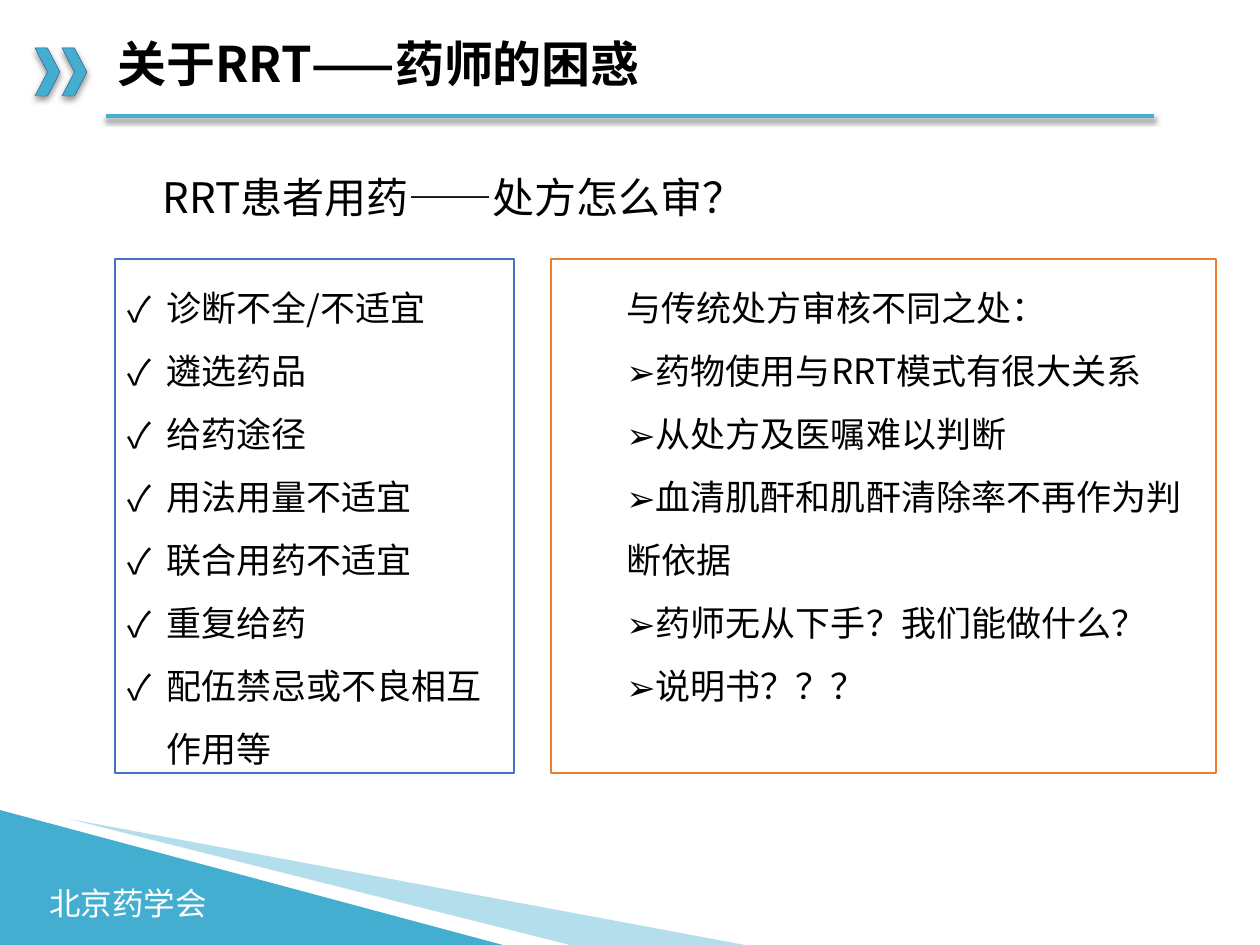
from dataclasses import dataclass

from lxml import etree
from pptx import Presentation
from pptx import util as u
from pptx.dml.color import RGBColor
from pptx.enum import lang, shapes, text
from pptx.oxml import ns

EMU_PER_PX = 914400 / 126
FONT = "Noto Sans CJK SC"
BLACK = RGBColor(0x00, 0x00, 0x00)
WHITE = RGBColor(0xFF, 0xFF, 0xFF)
GRAY = RGBColor(0x80, 0x80, 0x80)
TEAL = RGBColor(0x44, 0xAE, 0xD0)
NAVY = RGBColor(0x32, 0x54, 0x91)
BLUE = RGBColor(0x44, 0x72, 0xC4)
ORANGE = RGBColor(0xED, 0x7D, 0x31)


@dataclass
class Item:
    words: str
    bullet: str = ""


@dataclass
class Panel:
    box: tuple[int, int, int, int]
    border: RGBColor
    items: list[Item]
    level: int
    margin: int
    indent: int


def px(value: float) -> int:
    return round(value * EMU_PER_PX)


def set_all(target, values: dict) -> None:
    for name, value in values.items():
        setattr(target, name, value)


def place(shape, box: tuple[int, int, int, int]) -> None:
    set_all(shape, dict(zip(("left", "top", "width", "height"), map(px, box))))


def add_node(parent, tag: str, **attributes):
    return etree.SubElement(parent, ns.qn(tag), attributes)


def write(paragraph, words: str, size: int, color: RGBColor = BLACK, bold: bool = False) -> None:
    run = paragraph.add_run()
    run.text = words
    set_all(run.font, {"name": FONT, "size": u.Pt(size), "bold": bold,
                       "language_id": lang.MSO_LANGUAGE_ID.SIMPLIFIED_CHINESE})
    run.font.color.rgb = color
    add_node(run.font._element, "a:ea", typeface=FONT)


def set_bullet(paragraph, bullet: str, margin: int, indent: int) -> None:
    props = paragraph._p.get_or_add_pPr()
    props.set("marL", str(px(margin)))
    props.set("indent", str(px(indent)))
    if bullet:
        add_node(props, "a:buFont", typeface=FONT)
        add_node(props, "a:buChar", char=bullet)
    else:
        add_node(props, "a:buNone")


def cast_shadow(shape, color: RGBColor, alpha: int, blur: int, distance: int) -> None:
    props = shape._element.spPr
    effects = props.find(ns.qn("a:effectLst"))
    if effects is None:
        effects = add_node(props, "a:effectLst")
    shadow = add_node(effects, "a:outerShdw", blurRad=str(u.Pt(blur)), dist=str(u.Pt(distance)),
                      dir="5400000", algn="ctr", rotWithShape="0")
    tint = add_node(shadow, "a:srgbClr", val=str(color))
    add_node(tint, "a:alpha", val=str(alpha * 1000))


def paint(shape, fill: RGBColor, line: RGBColor | None = None, width: float = 1) -> None:
    shape.shadow.inherit = False
    shape.fill.solid()
    shape.fill.fore_color.rgb = fill
    if line is None:
        shape.line.fill.background()
    else:
        shape.line.color.rgb = line
        shape.line.width = u.Pt(width)


def add_preset(slide, kind, box: tuple[int, int, int, int]):
    return slide.shapes.add_shape(kind, *map(px, box))


def draw_footer(slide) -> None:
    wedge = add_preset(slide, shapes.MSO_SHAPE.ISOSCELES_TRIANGLE, (0, 810, 503, 135))
    wedge.adjustments[0] = 0
    paint(wedge, TEAL)

    society = slide.shapes.add_textbox(*map(px, (37, 878, 184, 50)))
    society.text_frame.word_wrap = False
    write(society.text_frame.paragraphs[0], "北京药学会", 18, WHITE)

    outline = slide.shapes.build_freeform(px(69), px(819))
    outline.add_line_segments([(px(745), px(945)), (px(570), px(945))])
    ray = outline.convert_to_shape()
    paint(ray, TEAL)
    tint = ray._element.spPr.find(ns.qn("a:solidFill"))[0]
    add_node(tint, "a:alpha", val="40000")


def draw_heading(slide) -> None:
    rule = slide.shapes.add_connector(shapes.MSO_CONNECTOR.STRAIGHT, px(1154), px(116), px(106), px(116))
    rule.line.color.rgb = TEAL
    rule.line.width = u.Pt(2.25)
    cast_shadow(rule, GRAY, 100, 3, 2)

    for left in (62, 35):
        chevron = add_preset(slide, shapes.MSO_SHAPE.CHEVRON, (left, 48, 25, 48))
        paint(chevron, TEAL, NAVY, 0.25)
        cast_shadow(chevron, BLACK, 46, 4, 2)


def fill_placeholders(slide) -> None:
    title, question = slide.shapes.title, slide.placeholders[1]
    place(title, (105, 26, 1086, 82))
    place(question, (87, 171, 1086, 112))
    for holder, anchor in ((title, text.MSO_ANCHOR.MIDDLE), (question, text.MSO_ANCHOR.TOP)):
        set_all(holder.text_frame, {"word_wrap": True, "vertical_anchor": anchor,
                                    "auto_size": text.MSO_AUTO_SIZE.NONE})
        set_all(holder.text_frame.paragraphs[0], {"alignment": text.PP_ALIGN.LEFT,
                                                  "line_spacing": 0.9, "space_before": u.Pt(0)})
    write(title.text_frame.paragraphs[0], "关于RRT——药师的困惑", 28, bold=True)
    line = question.text_frame.paragraphs[0]
    line.level = 1
    set_bullet(line, "", 63, 0)
    write(line, "RRT患者用药——处方怎么审？", 24)


def draw_panel(slide, panel: Panel) -> None:
    frame = add_preset(slide, shapes.MSO_SHAPE.RECTANGLE, panel.box)
    paint(frame, WHITE, panel.border)
    body = frame.text_frame
    set_all(body, {"word_wrap": True, "vertical_anchor": text.MSO_ANCHOR.TOP,
                   "auto_size": text.MSO_AUTO_SIZE.SHAPE_TO_FIT_TEXT})
    for index, item in enumerate(panel.items):
        paragraph = body.add_paragraph() if index else body.paragraphs[0]
        set_bullet(paragraph, item.bullet, panel.margin, panel.indent)
        set_all(paragraph, {"level": panel.level, "line_spacing": 1.5,
                            "alignment": text.PP_ALIGN.LEFT})
        write(paragraph, item.words, 20)


REVIEW_POINTS = ["诊断不全/不适宜", "遴选药品", "给药途径", "用法用量不适宜",
                 "联合用药不适宜", "重复给药", "配伍禁忌或不良相互作用等"]
DIFFERENCES = ["药物使用与RRT模式有很大关系", "从处方及医嘱难以判断",
               "血清肌酐和肌酐清除率不再作为判断依据",
               "药师无从下手？我们能做什么？", "说明书？？？"]
PANELS = [
    Panel((115, 259, 399, 514), BLUE, [Item(point, "✓") for point in REVIEW_POINTS], 0, 39, -39),
    Panel((551, 259, 665, 514), ORANGE,
          [Item("与传统处方审核不同之处：")] + [Item(point, "➢") for point in DIFFERENCES], 1, 63, 0),
]


def main() -> None:
    deck = Presentation()
    set_all(deck, {"slide_width": px(1260), "slide_height": px(945)})
    slide = deck.slides.add_slide(deck.slide_layouts[1])
    # Banner, footer, then content
    draw_heading(slide)
    draw_footer(slide)
    fill_placeholders(slide)
    for panel in PANELS:
        draw_panel(slide, panel)
    deck.save("out.pptx")


if __name__ == "__main__":
    main()
